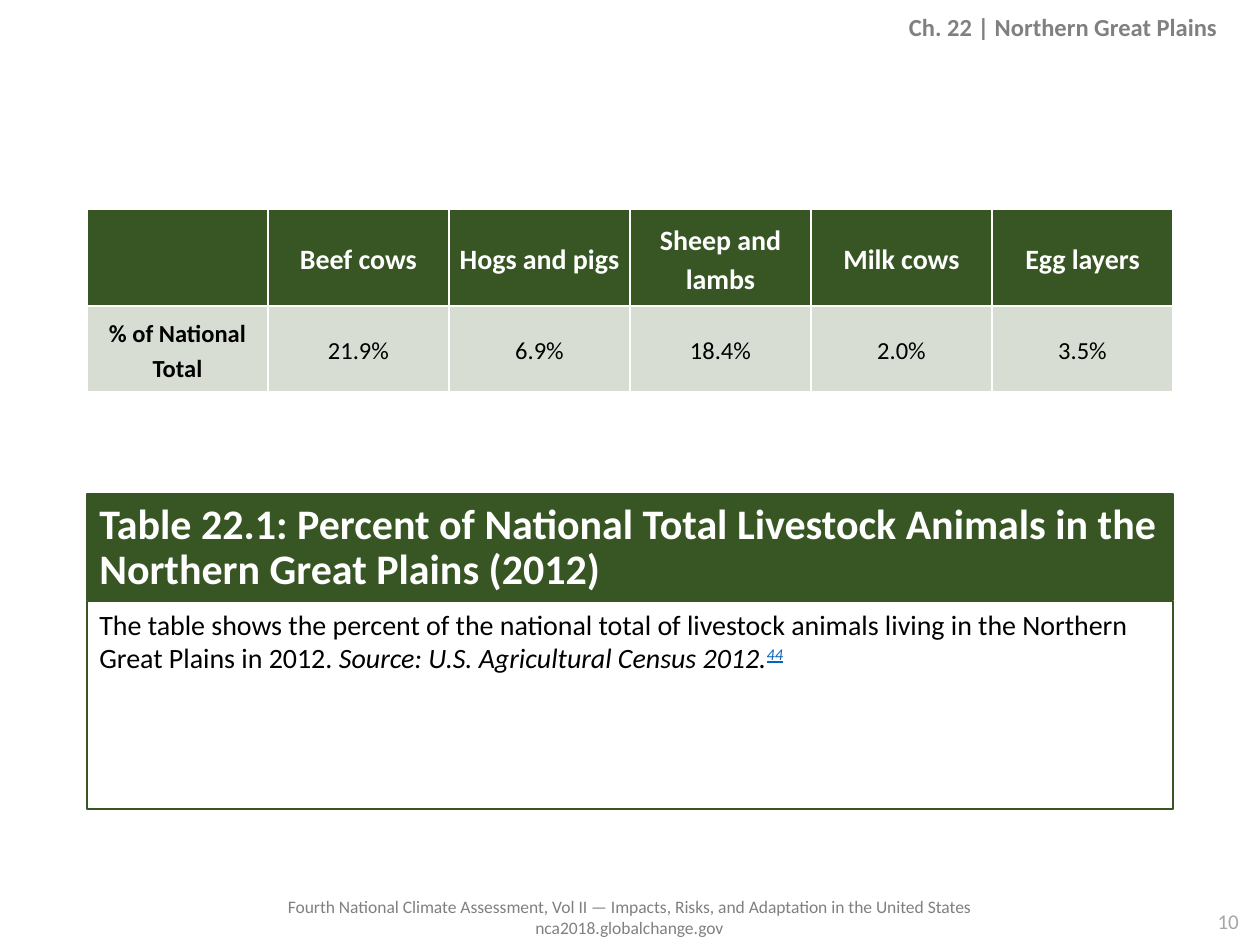
from dataclasses import dataclass
from lxml.etree import SubElement as Sub
from pptx import Presentation
from pptx.dml.color import RGBColor as Rgb
from pptx.enum.shapes import MSO_SHAPE as Kind
from pptx.enum.text import MSO_ANCHOR as Anchor, PP_ALIGN as Align
from pptx.oxml.ns import qn
from pptx.util import Inches, Pt

WIDE, HIGH = Inches(10), Inches(7.5)
LEFT, SPAN = 6.9, 86.2  # shared column, percent of slide width


@dataclass(frozen=True)
class Theme:
    font: str = "Calibri"
    green: str = "385623"
    head: str = "375623"
    pale: str = "D7DDD3"
    white: str = "FFFFFF"
    black: str = "000000"
    gray: str = "808080"
    light: str = "A6A6A6"
    link: str = "0563C1"
    title: int = 24
    text: int = 16
    cell: int = 14
    page: int = 12
    foot: int = 10


T = Theme()


def across(share):
    return int(WIDE * share / 100)


def down(share):
    return int(HIGH * share / 100)


def place(x, y, w, h):
    return across(x), down(y), across(w), down(h)


def apply(item, form):
    for key, value in form.items():
        setattr(item, key, value)


def add_run(para, text, size, color, base=None, **form):
    run = para.add_run()
    run.text = text
    apply(run.font, dict(name=T.font, size=Pt(size), **form))
    run.font.color.rgb = Rgb.from_string(color)
    if base:
        run._r.get_or_add_rPr().set("baseline", str(base * 1000))


def write(frame, lines, anchor=Anchor.TOP, **form):
    """Each line is a list of (text, size, color, format) runs."""
    apply(frame, dict(word_wrap=True, vertical_anchor=anchor))
    for i, runs in enumerate(lines):
        para = frame.add_paragraph() if i else frame.paragraphs[0]
        apply(para, form)
        for text, size, color, style in runs:
            add_run(para, text, size, color, **style)


def add_text(slide, spot, lines, **form):
    write(slide.shapes.add_textbox(*place(*spot)).text_frame, lines, **form)


def add_panel(slide, spot, fill, lines, **form):
    panel = slide.shapes.add_shape(Kind.RECTANGLE, *place(*spot))
    panel.shadow.inherit = False
    if fill:
        panel.fill.solid()
        panel.fill.fore_color.rgb = Rgb.from_string(fill)
    else:
        panel.fill.background()
    panel.line.color.rgb = Rgb.from_string(T.green)
    panel.line.width = Pt(1.5)
    write(panel.text_frame, lines, alignment=Align.LEFT, **form)


def edge(cell):
    props = cell._tc.get_or_add_tcPr()
    for side in ("lnL", "lnR", "lnT", "lnB"):
        line = Sub(props, qn("a:" + side), w=str(Pt(1)))
        Sub(Sub(line, qn("a:solidFill")), qn("a:srgbClr"), val=T.white)


def add_grid(slide, top, heights, rows):
    count = len(rows[0])
    spot = place(LEFT, top, SPAN, sum(heights))
    grid = slide.shapes.add_table(len(rows), count, *spot).table
    for col in grid.columns:
        col.width = across(SPAN / count)
    pads = ("margin_left", "margin_right", "margin_top", "margin_bottom")
    for r, texts in enumerate(rows):
        grid.rows[r].height = down(heights[r])
        fill, color, size = ((T.pale, T.black, T.cell) if r
                             else (T.head, T.white, T.text))
        for c, text in enumerate(texts):
            cell = grid.cell(r, c)
            edge(cell)
            cell.fill.solid()
            cell.fill.fore_color.rgb = Rgb.from_string(fill)
            apply(cell, dict.fromkeys(pads, Inches(0.07)))
            cell.vertical_anchor = Anchor.MIDDLE
            if text:
                para = cell.text_frame.paragraphs[0]
                apply(para, dict(alignment=Align.CENTER, line_spacing=1.15,
                                 space_after=Pt(6)))
                add_run(para, text, size, color, bold=r == 0 or c == 0)


def main():
    deck = Presentation()
    apply(deck, dict(slide_width=WIDE, slide_height=HIGH))
    slide = deck.slides.add_slide(deck.slide_layouts[6])

    # Footer and page number
    foot = ("Fourth National Climate Assessment, Vol II — Impacts, Risks, "
            "and Adaptation in the United States", "nca2018.globalchange.gov")
    add_text(slide, (20.3, 94.13, 59.3, 5.87),
             [[(text, T.foot, T.gray, {})] for text in foot],
             alignment=Align.CENTER)
    add_text(slide, (80.2, 95.47, 19.1, 3.6),
             [[("10", T.page, T.light, {})]], alignment=Align.RIGHT)

    # Caption: title band and description
    title = ("Table 22.1: Percent of National Total Livestock Animals "
             "in the Northern Great Plains (2012)")
    add_panel(slide, (LEFT, 52.27, SPAN, 11.2), T.green,
              [[(title, T.title, T.white, dict(bold=True))]],
              anchor=Anchor.BOTTOM, line_spacing=0.9)
    note = ("The table shows the percent of the national total of livestock "
            "animals living in the Northern Great Plains in 2012. ")
    add_panel(slide, (LEFT, 63.6, SPAN, 22), None, [[
        (note, T.text, T.black, {}),
        ("Source: U.S. Agricultural Census 2012.", T.text, T.black,
         dict(italic=True)),
        ("44", T.text, T.link, dict(italic=True, underline=True, base=30)),
    ]], space_after=Pt(6))

    # Chapter heading
    add_text(slide, (2.3, 0.93, 95.3, 4.13),
             [[("Ch. 22 | Northern Great Plains", T.cell, T.gray,
                dict(bold=True))]],
             anchor=Anchor.MIDDLE, alignment=Align.RIGHT, line_spacing=0.9)

    # Livestock table
    add_grid(slide, 22.13, (10.27, 9), [
        ("", "Beef cows", "Hogs and pigs", "Sheep and lambs", "Milk cows",
         "Egg layers"),
        ("% of National Total", "21.9%", "6.9%", "18.4%", "2.0%", "3.5%"),
    ])
    deck.save("out.pptx")


if __name__ == "__main__":
    main()
